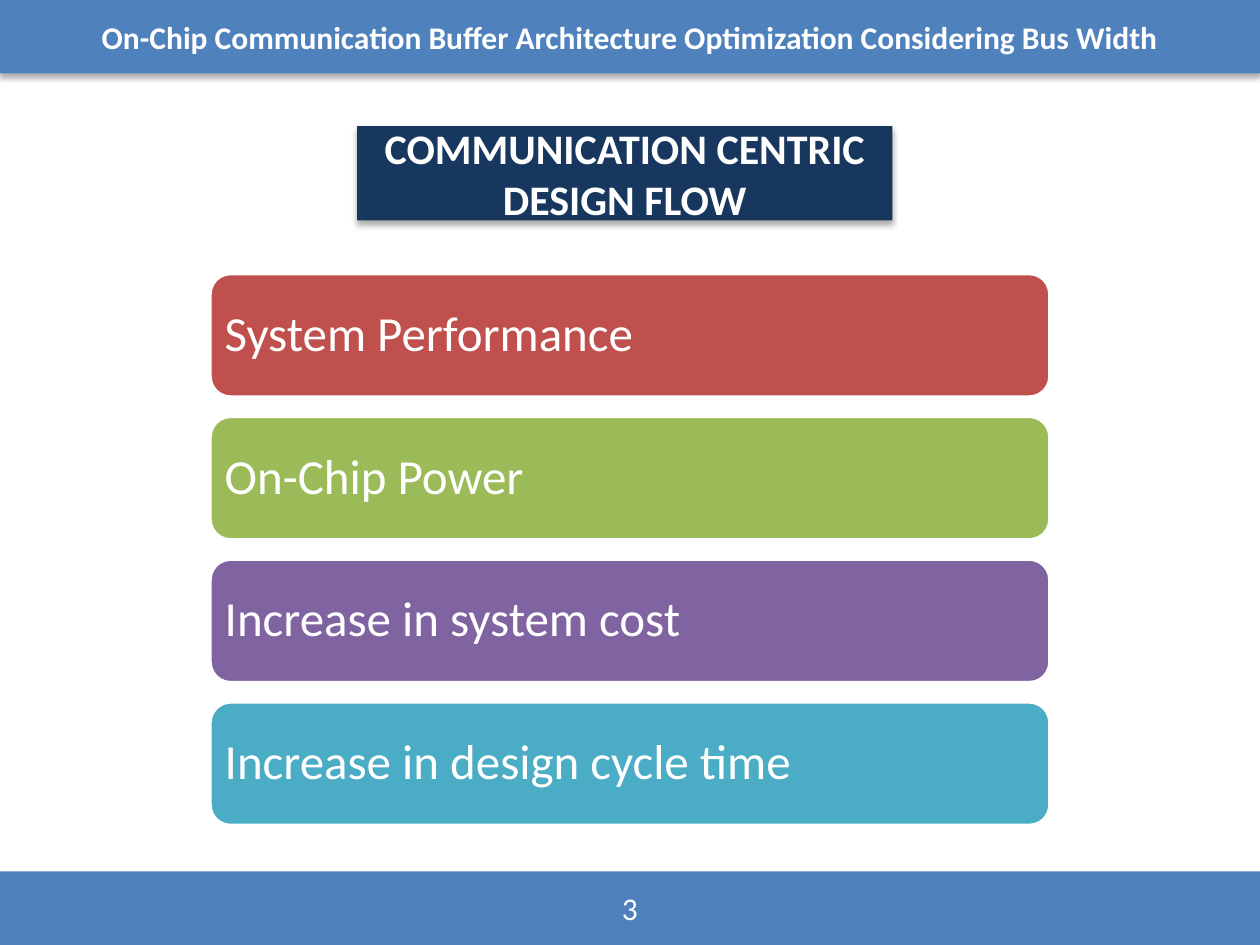
from dataclasses import dataclass

from lxml.etree import SubElement
from pptx import Presentation
from pptx.dml.color import RGBColor as RGB
from pptx.enum.shapes import MSO_SHAPE as Shape
from pptx.enum.text import MSO_ANCHOR as Anchor, MSO_AUTO_SIZE as AutoSize, PP_ALIGN as Align
from pptx.oxml.ns import qn
from pptx.util import Pt


@dataclass(frozen=True)
class Theme:
    font: str = "Calibri"
    white: str = "FFFFFF"
    bar: str = "4F81BD"
    title: str = "17375E"
    bar_size: int = 18
    title_size: int = 24
    item_size: int = 28


@dataclass(frozen=True)
class Item:
    text: str
    color: str


THEME = Theme()
WIDTH, HEIGHT = 720, 540
BAR_HEIGHT = 42
ITEM_LEFT, ITEM_TOP, ITEM_WIDTH, ITEM_HEIGHT = 120, 156.3, 480, 70.6
ITEM_PITCH = 81.6

ITEMS = [
    Item("System Performance", "C0504D"),
    Item("On-Chip Power", "9BBB59"),
    Item("Increase in system cost", "8064A2"),
    Item("Increase in design cycle time", "4BACC6"),
]


def write(sp, text: str, *, size: float, bold: bool = False, align=Align.CENTER,
          inset: float = 7.2, spacing: float = 1.0) -> None:
    tf = sp.text_frame
    tf.word_wrap = True
    tf.auto_size = AutoSize.NONE
    tf.vertical_anchor = Anchor.MIDDLE
    tf.margin_left = tf.margin_right = Pt(inset)
    tf.margin_top = tf.margin_bottom = Pt(3.6)
    p = tf.paragraphs[0]
    p.alignment = align
    p.line_spacing = spacing
    r = p.add_run()
    r.text = text
    r.font.name = THEME.font
    r.font.size = Pt(size)
    r.font.bold = bold
    r.font.color.rgb = RGB.from_string(THEME.white)


def fill(sp, color: str) -> None:
    sp.fill.solid()
    sp.fill.fore_color.rgb = RGB.from_string(color)


def add_shadow(sp) -> None:
    """Give the shape a soft shadow falling straight down."""
    effects = sp._element.spPr.find(qn("a:effectLst"))
    if effects is None:
        effects = SubElement(sp._element.spPr, qn("a:effectLst"))
    shadow = SubElement(effects, qn("a:outerShdw"), blurRad=str(Pt(3.5)),
                        dist=str(Pt(2.2)), dir="5400000", rotWithShape="0")
    color = SubElement(shadow, qn("a:srgbClr"), val="000000")
    SubElement(color, qn("a:alpha"), val="32000")


def add_bar(slide, top: float, text: str, bold: bool = False) -> None:
    sp = slide.shapes.add_shape(Shape.RECTANGLE, 0, Pt(top), Pt(WIDTH), Pt(BAR_HEIGHT))
    sp.shadow.inherit = False
    fill(sp, THEME.bar)
    sp.line.fill.background()
    add_shadow(sp)
    write(sp, text, size=THEME.bar_size, bold=bold)


def add_title(slide, text: str) -> None:
    sp = slide.shapes.title
    sp.left, sp.top, sp.width, sp.height = Pt(204), Pt(72), Pt(306), Pt(54)
    fill(sp, THEME.title)
    add_shadow(sp)
    write(sp, text, size=THEME.title_size, bold=True)


def add_item(slide, item: Item, top: float) -> None:
    sp = slide.shapes.add_shape(Shape.ROUNDED_RECTANGLE, Pt(ITEM_LEFT), Pt(top),
                                Pt(ITEM_WIDTH), Pt(ITEM_HEIGHT))
    sp.shadow.inherit = False
    fill(sp, item.color)
    sp.line.color.rgb = RGB.from_string(THEME.white)
    sp.line.width = Pt(2)
    write(sp, item.text, size=THEME.item_size, align=Align.LEFT, inset=5, spacing=0.9)


def main() -> None:
    prs = Presentation()
    prs.slide_width, prs.slide_height = Pt(WIDTH), Pt(HEIGHT)
    title_only = prs.slide_layouts[5]
    slide = prs.slides.add_slide(title_only)
    add_bar(slide, HEIGHT - BAR_HEIGHT, "3")
    add_bar(slide, 0, "On-Chip Communication Buffer Architecture Optimization "
                      "Considering Bus Width", bold=True)
    for i, item in enumerate(ITEMS):
        add_item(slide, item, ITEM_TOP + i * ITEM_PITCH)
    add_title(slide, "COMMUNICATION CENTRIC DESIGN FLOW")
    prs.save("out.pptx")


if __name__ == "__main__":
    main()
